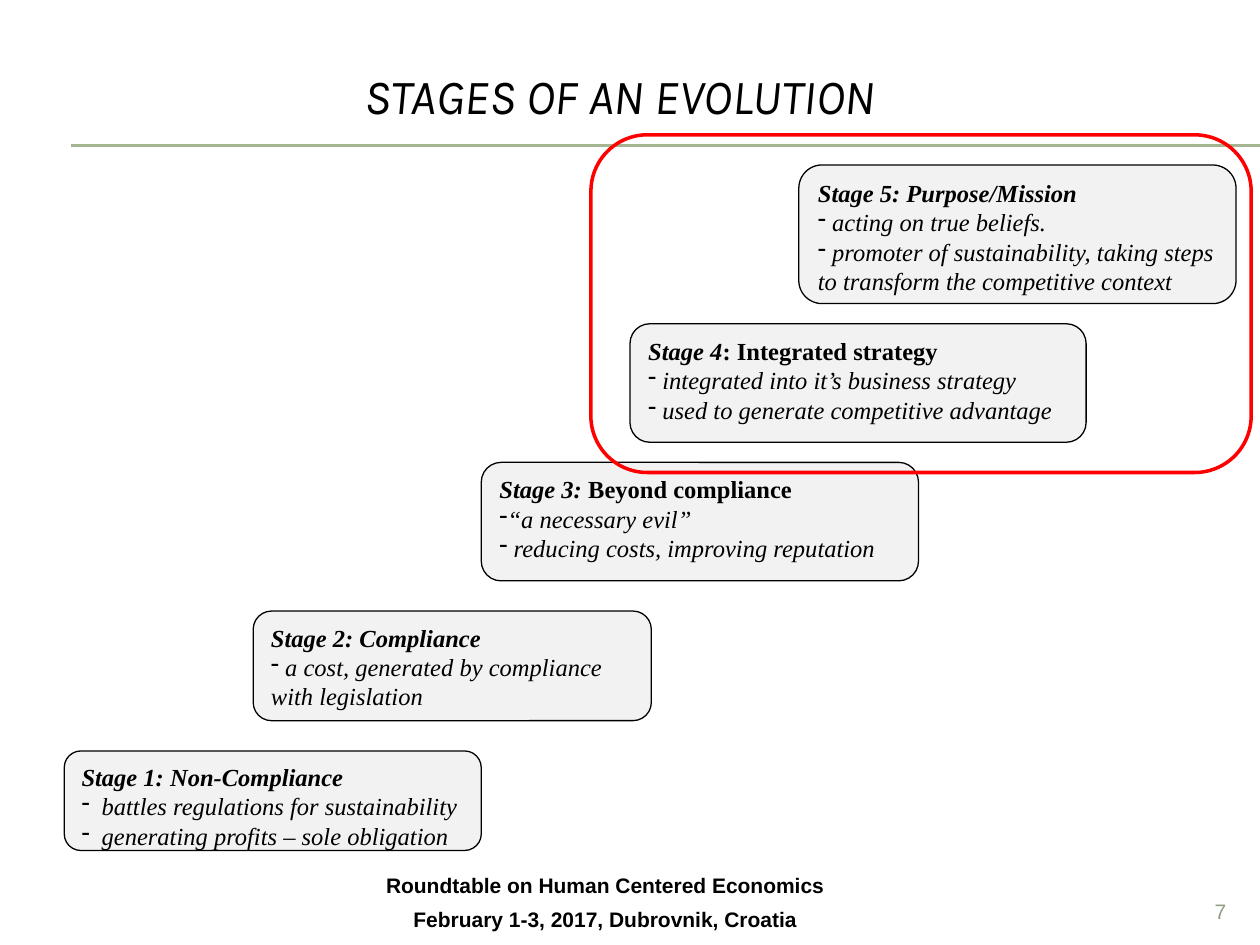
from dataclasses import dataclass

from lxml import etree
from pptx import Presentation
from pptx.dml.color import RGBColor
from pptx.enum.shapes import MSO_CONNECTOR, MSO_SHAPE
from pptx.enum.text import MSO_ANCHOR, MSO_AUTO_SIZE, PP_ALIGN
from pptx.oxml.ns import qn
from pptx.util import Inches, Pt

TITLE_ONLY = 5
ROUNDED = MSO_SHAPE.ROUNDED_RECTANGLE
STRAIGHT = MSO_CONNECTOR.STRAIGHT
TOP, MIDDLE = MSO_ANCHOR.TOP, MSO_ANCHOR.MIDDLE
LEFT, CENTER, RIGHT = PP_ALIGN.LEFT, PP_ALIGN.CENTER, PP_ALIGN.RIGHT


@dataclass(frozen=True)
class Theme:
    black: str = "000000"
    rule: str = "A5B592"
    card: str = "C0C0C0"
    card_opacity: int = 20
    highlight: str = "FF0000"
    number: str = "909E80"
    title_font: str = "Karla"
    stage_font: str = "Times New Roman"
    footer_font: str = "Arial"
    title_size: int = 28
    stage_size: int = 14
    small_size: int = 12
    thin: float = 0.75
    thick: float = 2
    corner: float = 0.167


THEME = Theme()

# Box, heading runs as (text, italic), bullet items, hanging indent
STAGES = [
    ((0.51, 5.96, 3.31, 0.79), [("Stage 1: Non-Compliance", True)],
     ["battles regulations for sustainability",
      "generating profits – sole obligation"], 0.16),
    ((2.01, 4.85, 3.16, 0.87), [("Stage 2: Compliance", True)],
     [" a cost, generated by compliance with legislation"], 0),
    ((3.82, 3.67, 3.47, 0.94),
     [("Stage 3:", True), (" Beyond compliance", False)],
     ["“a necessary evil”", " reducing costs, improving reputation"], 0),
    ((5, 2.57, 3.62, 0.94),
     [("Stage 4", True), (": Integrated strategy", False)],
     [" integrated into it’s business strategy",
      " used to generate competitive advantage"], 0),
    ((6.34, 1.31, 3.47, 1.1), [("Stage 5: Purpose/Mission", True)],
     [" acting on true beliefs.",
      " promoter of sustainability, taking steps to transform the "
      "competitive context"], 0),
]


def inches(*values):
    return [Inches(value) for value in values]


def style_font(font, name, size, color=THEME.black, bold=False, italic=False):
    font.name = name
    font.size = Pt(size)
    font.color.rgb = RGBColor.from_string(color)
    font.bold = bold
    font.italic = italic


def add_bullet(paragraph, hang):
    properties = paragraph._p.get_or_add_pPr()
    properties.set("marL", str(Inches(hang)))
    properties.set("indent", str(-Inches(hang)))
    color = etree.SubElement(properties, qn("a:buClr"))
    etree.SubElement(color, qn("a:srgbClr"), val=THEME.black)
    etree.SubElement(properties, qn("a:buChar"), char="-")


def set_title(slide, text):
    title = slide.shapes.title
    title.left, title.top, title.width, title.height = inches(0, 0.29, 9.83, 0.92)
    frame = title.text_frame
    frame.text = text
    frame.auto_size = MSO_AUTO_SIZE.NONE
    frame.vertical_anchor = MIDDLE
    paragraph = frame.paragraphs[0]
    paragraph.alignment = CENTER
    style_font(paragraph.runs[0].font, THEME.title_font, THEME.title_size,
               italic=True)


def add_rule(slide, y):
    rule = slide.shapes.add_connector(STRAIGHT, *inches(0.56, y, 10, y))
    rule.line.color.rgb = RGBColor.from_string(THEME.rule)
    rule.line.width = Pt(THEME.thin)
    etree.SubElement(rule._element.spPr, qn("a:effectLst"))


def add_rounded_box(slide, box, line_color, line_width):
    shape = slide.shapes.add_shape(ROUNDED, *inches(*box))
    shape.adjustments[0] = THEME.corner
    shape.shadow.inherit = False
    shape.fill.background()
    shape.line.color.rgb = RGBColor.from_string(line_color)
    shape.line.width = Pt(line_width)
    return shape


def add_stage(slide, box, heading, items, hang):
    shape = add_rounded_box(slide, box, THEME.black, THEME.thin)
    shape.fill.solid()
    shape.fill.fore_color.rgb = RGBColor.from_string(THEME.card)
    color = shape._element.spPr.find(qn("a:solidFill")).find(qn("a:srgbClr"))
    etree.SubElement(color, qn("a:alpha"), val=str(THEME.card_opacity * 1000))

    frame = shape.text_frame
    frame.word_wrap = True
    frame.vertical_anchor = TOP
    paragraph = frame.paragraphs[0]
    paragraph.alignment = LEFT
    for text, italic in heading:
        run = paragraph.add_run()
        run.text = text
        style_font(run.font, THEME.stage_font, THEME.stage_size,
                   bold=True, italic=italic)
    for item in items:
        paragraph = frame.add_paragraph()
        paragraph.text = item
        paragraph.alignment = LEFT
        add_bullet(paragraph, hang)
        style_font(paragraph.runs[0].font, THEME.stage_font, THEME.stage_size,
                   italic=True)


def add_text(slide, box, lines, alignment, anchor, color, bold=False, gap=0):
    frame = slide.shapes.add_textbox(*inches(*box)).text_frame
    frame.word_wrap = True
    frame.vertical_anchor = anchor
    frame.text = "\n".join(lines)
    for index, paragraph in enumerate(frame.paragraphs):
        paragraph.alignment = alignment
        if index:
            paragraph.space_before = Pt(gap)
        style_font(paragraph.runs[0].font, THEME.footer_font, THEME.small_size,
                   color, bold)


def main():
    presentation = Presentation()
    presentation.slide_width, presentation.slide_height = inches(10, 7.5)
    slide = presentation.slides.add_slide(presentation.slide_layouts[TITLE_ONLY])

    # Heading with its double rule
    set_title(slide, "STAGES OF AN EVOLUTION")
    for y in (1.15, 1.16):
        add_rule(slide, y)

    # Footer
    add_text(slide, (0.47, 6.82, 8.67, 0.68),
             ["Roundtable on Human Centered Economics",
              "February 1-3, 2017, Dubrovnik, Croatia"],
             CENTER, MIDDLE, THEME.black, bold=True, gap=5)

    # Staircase of stages
    for stage in STAGES:
        add_stage(slide, *stage)

    # Slide number and frame around the upper stages
    add_text(slide, (9, 7.08, 0.83, 0.27), ["7"], RIGHT, TOP, THEME.number)
    add_rounded_box(slide, (4.69, 1.07, 5.24, 2.68), THEME.highlight, THEME.thick)

    presentation.save("out.pptx")


if __name__ == "__main__":
    main()
